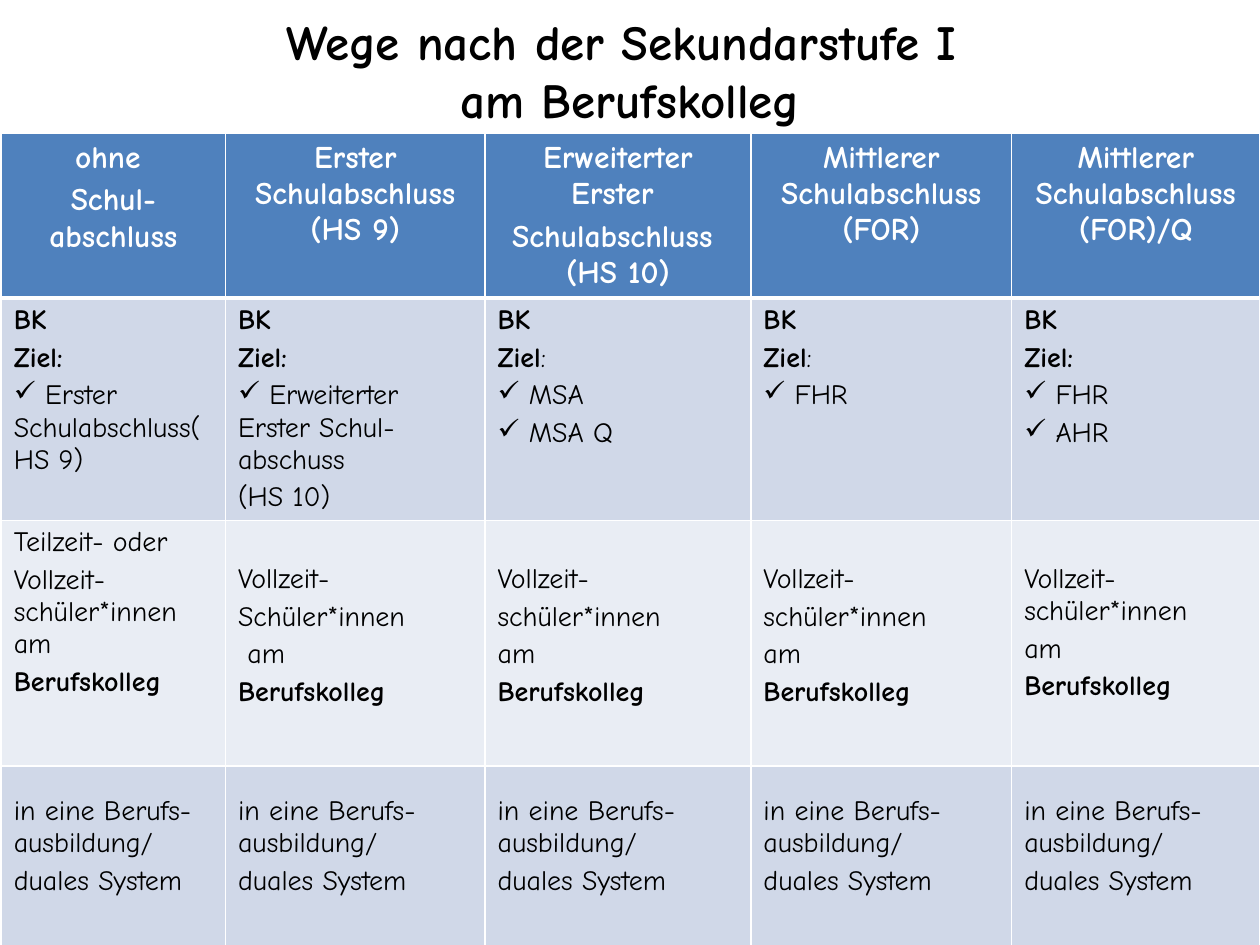
from dataclasses import dataclass

import pptx
import pptx.dml.color
import pptx.enum.text
import pptx.oxml.ns
import pptx.util
from lxml import etree

Inches = pptx.util.Inches
Pt = pptx.util.Pt
ALIGN = pptx.enum.text.PP_ALIGN

FONT = "Comic Neue"
WHITE, BLACK = "FFFFFF", "000000"
HEADER_BLUE, BAND_DARK, BAND_LIGHT = "4F81BD", "D0D8E8", "E9EDF4"
COLUMN_WIDTHS = [1.78, 2.06, 2.11, 2.07, 1.97]


@dataclass(frozen=True)
class Line:
    """One paragraph: text, an optional regular-weight tail, and its look."""
    text: str
    bold: bool = False
    tail: str = ""
    check: bool = False


@dataclass(frozen=True)
class Row:
    height: float
    fill: str
    cells: list[list[Line]]
    size: int = 16
    color: str = BLACK
    align: ALIGN = ALIGN.LEFT
    top_border: float = 1
    bottom_border: float = 1
    top_gaps: tuple[float, ...] = (0.05,) * 5


def bold(text: str, tail: str = "") -> Line:
    return Line(text, bold=True, tail=tail)


def check(text: str) -> Line:
    return Line(" " + text, check=True)


def plain(*texts: str) -> list[Line]:
    return [Line(text) for text in texts]


def goal(title: Line, *lines: Line) -> list[Line]:
    return [bold("BK"), title, *lines]


def pupils(*texts: str) -> list[Line]:
    return [*plain(*texts), bold("Berufskolleg")]


def training(ending: str = "") -> list[Line]:
    return plain("in eine Berufs-ausbildung/", "duales System" + ending)


ROWS = [
    Row(1.06, HEADER_BLUE, [
        [bold("ohne "), bold("Schul-abschluss")],
        [bold("Erster Schulabschluss (HS 9)")],
        [bold("Erweiterter Erster "), bold("Schulabschluss  (HS 10)")],
        [bold("Mittlerer Schulabschluss (FOR)")],
        [bold("Mittlerer Schulabschluss (FOR)/Q")],
    ], size=18, color=WHITE, align=ALIGN.CENTER, bottom_border=3),
    Row(1.33, BAND_DARK, [
        goal(bold("Ziel: "), check("Erster Schulabschluss(HS 9)")),
        goal(bold("Ziel: "), check("Erweiterter Erster Schul-abschuss "), Line("(HS 10)")),
        goal(bold("Ziel", ": "), check("MSA"), check("MSA Q")),
        goal(bold("Ziel", ": "), check("FHR")),
        goal(bold("Ziel:"), check("FHR"), check("AHR")),
    ], top_border=3),
    Row(1.95, BAND_LIGHT, [
        pupils("Teilzeit- oder", "Vollzeit-schüler*innen am"),
        pupils("Vollzeit-", "Schüler*innen ", " am "),
        pupils("Vollzeit-", "schüler*innen ", "am "),
        pupils("Vollzeit-", "schüler*innen ", "am "),
        pupils("Vollzeit-schüler*innen", "am "),
    ], top_gaps=(0.05,) + (0.34,) * 4),
    Row(1.48, BAND_DARK, [training()] * 4 + [training(" ")], top_gaps=(0.23,) * 5),
]


def rgb(color: str) -> pptx.dml.color.RGBColor:
    return pptx.dml.color.RGBColor.from_string(color)


def add_run(paragraph, text: str, size: float, color: str, is_bold: bool) -> None:
    run = paragraph.add_run()
    run.text = text
    run.font.name = FONT
    run.font.size = Pt(size)
    run.font.bold = is_bold
    run.font.color.rgb = rgb(color)


def add_check_bullet(paragraph) -> None:
    properties = paragraph._p.get_or_add_pPr()
    properties.set("marL", "0")
    properties.set("indent", "0")
    bullet = etree.SubElement(properties, pptx.oxml.ns.qn("a:buChar"))
    bullet.set("char", "✓")


def set_borders(cell, row: Row) -> None:
    widths = {"L": 1, "R": 1, "T": row.top_border, "B": row.bottom_border}
    properties = cell._tc.get_or_add_tcPr()
    for side, width in widths.items():
        line = etree.SubElement(properties, pptx.oxml.ns.qn(f"a:ln{side}"), w=str(Pt(width)))
        fill = etree.SubElement(line, pptx.oxml.ns.qn("a:solidFill"))
        etree.SubElement(fill, pptx.oxml.ns.qn("a:srgbClr"), val=WHITE)


def fill_cell(cell, lines: list[Line], row: Row, top_gap: float) -> None:
    set_borders(cell, row)
    cell.fill.solid()
    cell.fill.fore_color.rgb = rgb(row.fill)
    cell.margin_left = cell.margin_right = Inches(0.1)
    cell.margin_top, cell.margin_bottom = Inches(top_gap), Inches(0.05)
    for index, line in enumerate(lines):
        paragraph = cell.text_frame.add_paragraph() if index else cell.text_frame.paragraphs[0]
        paragraph.alignment = row.align
        paragraph.space_before = Pt(0.2 * row.size if index else 0)
        if line.check:
            add_check_bullet(paragraph)
        add_run(paragraph, line.text, row.size, row.color, line.bold)
        if line.tail:
            add_run(paragraph, line.tail, row.size, row.color, False)


def add_title(slide) -> None:
    title = slide.shapes.title
    title.left, title.top = Inches(0.5), Inches(-0.07)
    title.width, title.height = Inches(9), Inches(1.25)
    title.text_frame.vertical_anchor = pptx.enum.text.MSO_ANCHOR.MIDDLE
    paragraph = title.text_frame.paragraphs[0]
    paragraph.alignment = ALIGN.CENTER
    add_run(paragraph, "Wege nach der Sekundarstufe I ", 28, BLACK, True)
    paragraph.add_line_break()
    add_run(paragraph, "am Berufskolleg", 28, BLACK, True)


def add_pathways_table(slide) -> None:
    frame = slide.shapes.add_table(
        len(ROWS), len(COLUMN_WIDTHS), Inches(0.01), Inches(1.06),
        Inches(sum(COLUMN_WIDTHS)), Inches(sum(row.height for row in ROWS)))
    table = frame.table
    for column, width in zip(table.columns, COLUMN_WIDTHS):
        column.width = Inches(width)
    for table_row, row in zip(table.rows, ROWS):
        table_row.height = Inches(row.height)
        for cell, lines, top_gap in zip(table_row.cells, row.cells, row.top_gaps):
            fill_cell(cell, lines, row, top_gap)


def main() -> None:
    presentation = pptx.Presentation()
    presentation.slide_width, presentation.slide_height = Inches(10), Inches(7.5)
    slide = presentation.slides.add_slide(presentation.slide_layouts[5])
    add_title(slide)
    add_pathways_table(slide)
    presentation.save("out.pptx")


if __name__ == "__main__":
    main()
